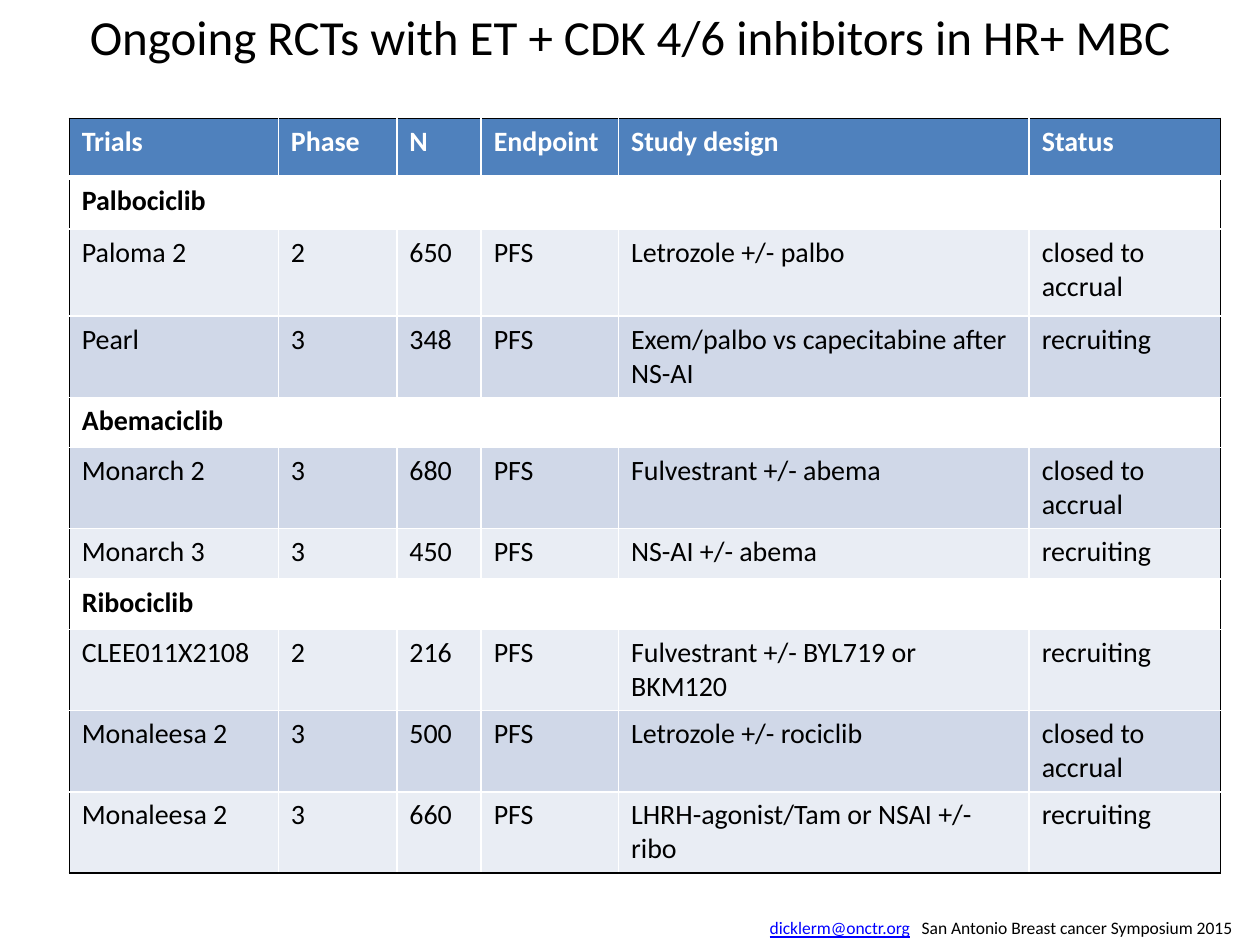
from dataclasses import dataclass

from lxml.etree import SubElement
from pptx import Presentation
from pptx.dml.color import RGBColor
from pptx.enum.text import MSO_ANCHOR as Anchor, PP_ALIGN as Align
from pptx.oxml.ns import qn
from pptx.util import Pt

FONT = "Calibri"
BLACK, WHITE, LINK = "000000", "FFFFFF", "0000FF"
HEADER, LIGHT, DARK = "4F81BD", "E9EDF4", "D0D8E8"
SINGLE, DOUBLE = 28.8, 45.7
COLUMNS = [119.5, 67.7, 48.2, 78.5, 234.7, 109.4]


@dataclass
class Row:
    height: float
    fill: str
    texts: list[str]
    bold: bool = False
    color: str = BLACK


ROWS = [
    Row(33.8, HEADER, ["Trials", "Phase", "N", "Endpoint", "Study design", "Status"], True, WHITE),
    Row(29.5, WHITE, ["Palbociclib"], True),
    Row(49.7, LIGHT, ["Paloma 2", "2", "650", "PFS", "Letrozole +/- palbo", "closed to accrual"]),
    Row(DOUBLE, DARK, ["Pearl", "3", "348", "PFS", "Exem/palbo vs capecitabine after NS-AI", "recruiting"]),
    Row(SINGLE, WHITE, ["Abemaciclib"], True),
    Row(DOUBLE, DARK, ["Monarch 2", "3", "680", "PFS", "Fulvestrant +/- abema", "closed to accrual"]),
    Row(SINGLE, LIGHT, ["Monarch 3", "3", "450", "PFS", "NS-AI +/- abema", "recruiting"]),
    Row(SINGLE, WHITE, ["Ribociclib"], True),
    Row(DOUBLE, LIGHT, ["CLEE011X2108", "2", "216", "PFS", "Fulvestrant +/- BYL719 or BKM120", "recruiting"]),
    Row(DOUBLE, DARK, ["Monaleesa 2", "3", "500", "PFS", "Letrozole +/- rociclib", "closed to accrual"]),
    Row(DOUBLE, LIGHT, ["Monaleesa 2", "3", "660", "PFS", "LHRH-agonist/Tam or NSAI +/- ribo", "recruiting"]),
]


def rgb(color: str) -> RGBColor:
    return RGBColor.from_string(color)


def format_run(r, size: float, color: str, bold: bool = False, underline: bool = False) -> None:
    r.font.name = FONT
    r.font.size = Pt(size)
    r.font.color.rgb = rgb(color)
    r.font.bold = bold
    r.font.underline = underline


def add_border(cell, side: str, color: str, width: float) -> None:
    ln = SubElement(cell._tc.get_or_add_tcPr(), qn(f"a:{side}"), w=str(Pt(width)))
    fill = SubElement(ln, qn("a:solidFill"))
    SubElement(fill, qn("a:srgbClr"), val=color)


def format_cell(cell, row: Row, i: int, j: int) -> None:
    last_row, last_col = len(ROWS) - 1, len(COLUMNS) - 1
    add_border(cell, "lnL", BLACK if j == 0 else WHITE, 1)
    add_border(cell, "lnR", BLACK if j == last_col or len(row.texts) == 1 else WHITE, 1)
    add_border(cell, "lnT", BLACK if i == 0 else WHITE, 3 if i == 1 else 1)
    add_border(cell, "lnB", BLACK if i == last_row else WHITE, 3 if i == 0 else 1)
    cell.fill.solid()
    cell.fill.fore_color.rgb = rgb(row.fill)


def add_title(s, text: str) -> None:
    title = s.shapes.title
    title.left, title.top, title.width, title.height = Pt(0), Pt(0), Pt(720), Pt(41)
    tf = title.text_frame
    tf.text = text
    tf.word_wrap = True
    tf.vertical_anchor = Anchor.MIDDLE
    p = tf.paragraphs[0]
    p.alignment = Align.CENTER
    format_run(p.runs[0], 28, BLACK)


def add_trials(s) -> None:
    height = sum(row.height for row in ROWS)
    frame = s.shapes.add_table(
        len(ROWS), len(COLUMNS), Pt(39.6), Pt(67.7), Pt(sum(COLUMNS)), Pt(height)
    )
    table = frame.table
    table.horz_banding = False
    for column, width in zip(table.columns, COLUMNS):
        column.width = Pt(width)
    for i, row in enumerate(ROWS):
        table.rows[i].height = Pt(row.height)
        for j in range(len(COLUMNS)):
            format_cell(table.cell(i, j), row, i, j)
        if len(row.texts) == 1:
            table.cell(i, 0).merge(table.cell(i, len(COLUMNS) - 1))
        for j, text in enumerate(row.texts):
            p = table.cell(i, j).text_frame.paragraphs[0]
            p.text = text
            format_run(p.runs[0], 16, row.color, row.bold)


def add_source(s, address: str, event: str) -> None:
    tf = s.shapes.add_textbox(Pt(432.7), Pt(520.6), Pt(287.3), Pt(19.4)).text_frame
    tf.word_wrap = False
    p = tf.paragraphs[0]
    for text, color in ((address, LINK), (" ", BLACK), (event, BLACK)):
        r = p.add_run()
        r.text = text
        format_run(r, 10, color, underline=color == LINK)
    p.runs[1]._r.get_or_add_rPr().set("spc", "450")


def main() -> None:
    prs = Presentation()
    prs.slide_width, prs.slide_height = Pt(720), Pt(540)
    s = prs.slides.add_slide(prs.slide_layouts[5])
    add_title(s, "Ongoing RCTs with ET + CDK 4/6 inhibitors in HR+ MBC")
    add_trials(s)
    add_source(s, "dicklerm@onctr.org", "San Antonio Breast cancer Symposium 2015")
    prs.save("out.pptx")


if __name__ == "__main__":
    main()
